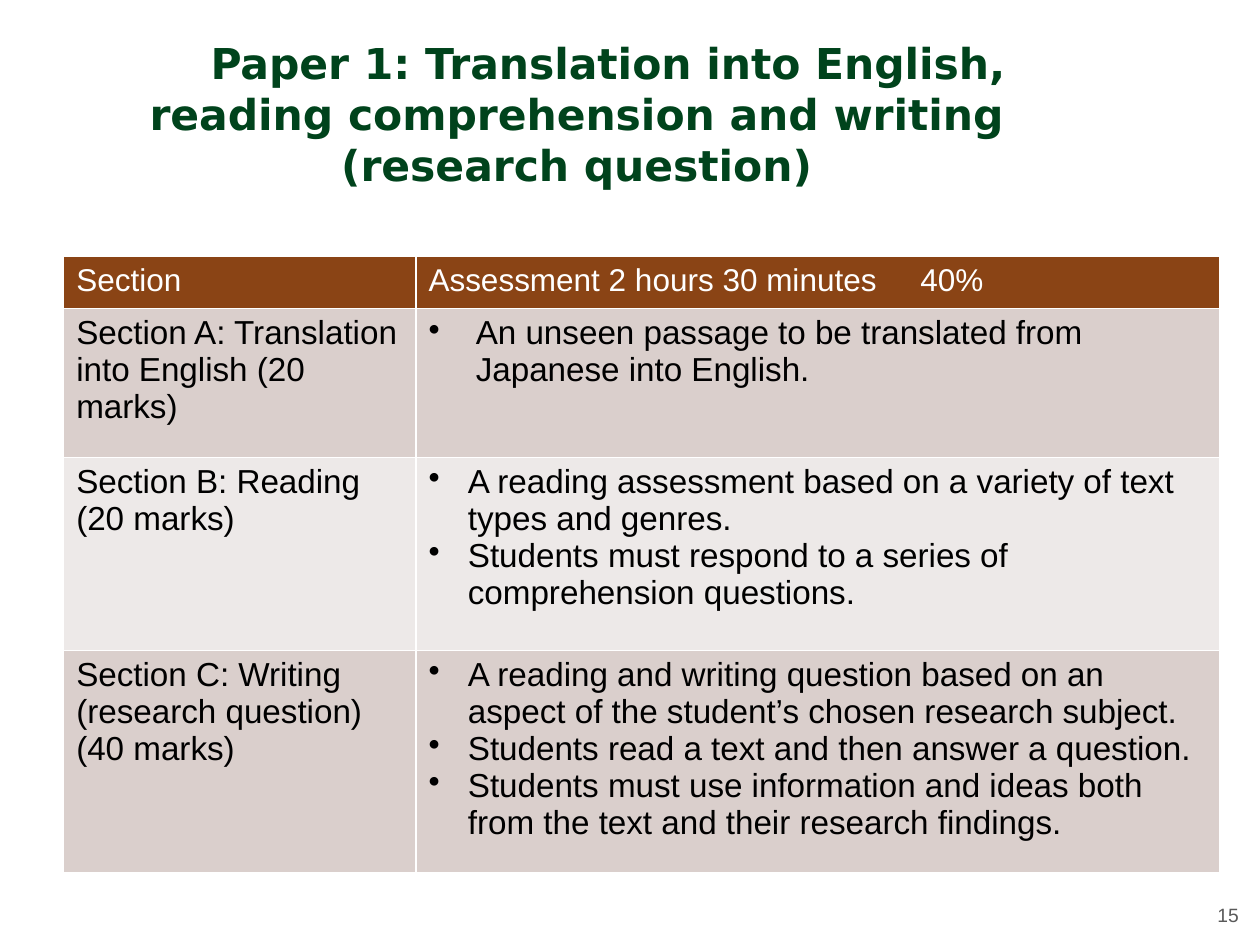
from pptx import Presentation
from pptx.dml.color import RGBColor
from pptx.enum import text as t
from pptx.oxml import parse_xml
from pptx.oxml import ns
from pptx.util import Pt

HEX = {
    "title": "00431C", "head": "8A4415", "dark": "DACFCC", "light": "EDE9E8",
    "white": "FFFFFF", "black": "000000", "grey": "595959",
}
ROWS = [
    ("Section A: Translation into English (20 marks)",
     ["An unseen passage to be translated from Japanese into English."]),
    ("Section B: Reading (20 marks)",
     ["A reading assessment based on a variety of text types and genres.",
      "Students must respond to a series of comprehension questions."]),
    ("Section C: Writing (research question) (40 marks)",
     ["A reading and writing question based on an aspect of the student’s chosen research subject.",
      "Students read a text and then answer a question.",
      "Students must use information and ideas both from the text and their research findings."]),
]


def rgb(name):
    return RGBColor.from_string(HEX[name])


def node(xml):
    return parse_xml(xml.replace(">", f" {ns.nsdecls('a')}>", 1))


def style(par, size, color, face="Arial", bold=False):
    for run in par.runs:
        font = run.font
        font.name, font.size, font.bold = face, Pt(size), bold
        font.color.rgb = rgb(color)


def indent(par, left, first):
    props = par._p.get_or_add_pPr()
    props.set("marL", str(Pt(left)))
    props.set("indent", str(Pt(first)))
    return props


def bullet(par, left):
    indent(par, left, -left).append(node('<a:buChar char="•"></a:buChar>'))


def stop(par, pos):
    tabs = node(f'<a:tabLst><a:tab pos="{Pt(pos)}" algn="l"/></a:tabLst>')
    par._p.get_or_add_pPr().append(tabs)


def paint(cell, fill):
    props = cell._tc.get_or_add_tcPr()
    for side in "LRTB":
        props.append(node(
            f'<a:ln{side} w="{Pt(1)}"><a:solidFill><a:srgbClr val="{HEX["white"]}"/>'
            f'</a:solidFill></a:ln{side}>'))
    cell.fill.solid()
    cell.fill.fore_color.rgb = rgb(fill)


def write(cell, lines, size, color, fill, left=0):
    paint(cell, fill)
    frame = cell.text_frame
    frame.text = "\n".join(lines)
    for par in frame.paragraphs:
        if left:
            bullet(par, left)
        if size == 19:
            par.line_spacing = Pt(21.1)
        style(par, size, color)


def add_title(slide):
    box = slide.shapes.title
    box.left, box.top, box.width, box.height = Pt(61), Pt(21), Pt(537), Pt(44)
    frame = box.text_frame
    frame.text = "Paper 1: Translation into English, reading comprehension and writing (research question)"
    frame.word_wrap = True
    frame.auto_size = t.MSO_AUTO_SIZE.NONE
    frame.vertical_anchor = t.MSO_ANCHOR.TOP
    frame.margin_left = frame.margin_right = frame.margin_top = frame.margin_bottom = 0
    par = frame.paragraphs[0]
    indent(par, 0, 36)
    par.alignment = t.PP_ALIGN.CENTER
    par.line_spacing = Pt(29.1)
    style(par, 24.3, "title", "DejaVu Sans", True)


def add_grid(slide):
    grid = slide.shapes.add_table(
        len(ROWS) + 1, 2, Pt(36.4), Pt(146.5), Pt(661), Pt(352)).table
    for col, width in zip(grid.columns, (201.3, 459.4)):
        col.width = Pt(width)
    for row, height in zip(grid.rows, (29.9, 85, 110.3, 127)):
        row.height = Pt(height)
    write(grid.cell(0, 0), ["Section"], 18, "white", "head")
    top = grid.cell(0, 1)
    write(top, ["Assessment 2 hours 30 minutes\t40%"], 18, "white", "head")
    stop(top.text_frame.paragraphs[0], 281)
    for num, (name, points) in enumerate(ROWS, 1):
        fill = "dark" if num % 2 else "light"
        write(grid.cell(num, 0), [name], 19, "black", fill)
        write(grid.cell(num, 1), points, 19, "black", fill, 27 if num == 1 else 22.5)


def add_number(slide):
    box = slide.shapes.add_textbox(Pt(685.5), Pt(512.6), Pt(29.5), Pt(20.9))
    frame = box.text_frame
    frame.word_wrap = True
    frame.text = "15"
    par = frame.paragraphs[0]
    par.alignment = t.PP_ALIGN.RIGHT
    style(par, 11, "grey")


def main():
    deck = Presentation()
    deck.slide_width, deck.slide_height = Pt(720), Pt(540)
    slide = deck.slides.add_slide(deck.slide_layouts[5])
    add_title(slide)
    add_grid(slide)
    add_number(slide)
    deck.save("out.pptx")


if __name__ == "__main__":
    main()
